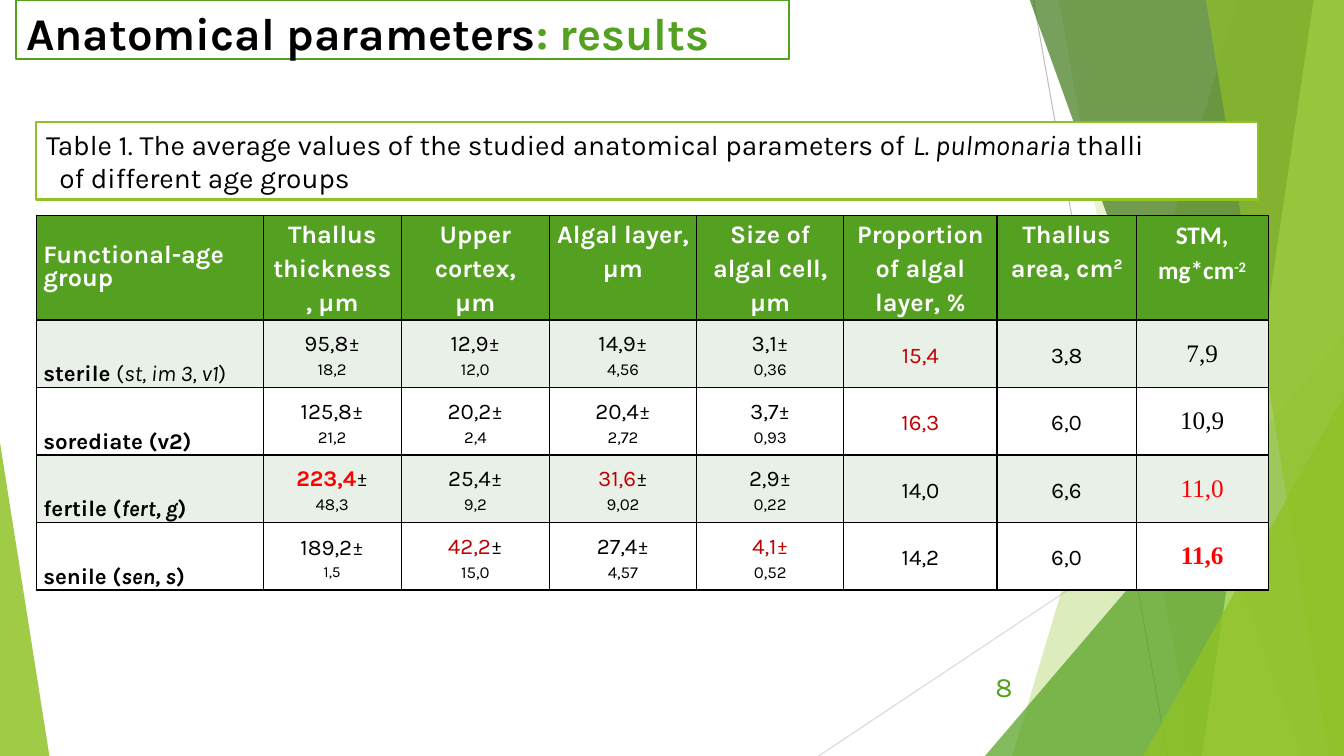
from dataclasses import dataclass

from lxml.etree import SubElement
from pptx import Presentation
from pptx.dml.color import RGBColor
from pptx.enum.shapes import MSO_CONNECTOR, MSO_SHAPE
from pptx.enum.text import MSO_ANCHOR as Anchor, PP_ALIGN as Align
from pptx.oxml.ns import qn
from pptx.util import Inches, Pt


@dataclass(frozen=True)
class Theme:
    font: str = "Karla"
    stm_head_font: str = "Calibri"
    stm_font: str = "Times New Roman"
    lime: str = "90C226"
    green: str = "54A021"
    forest: str = "3F7819"
    pale_lime: str = "C0E474"
    stripe: str = "E9F0E8"
    white: str = "FFFFFF"
    black: str = "000000"
    dark_red: str = "C00000"
    red: str = "FF0000"
    title: float = 32.4
    caption: float = 20
    head: float = 18
    body: float = 16
    deviation: float = 12


T = Theme()

# Decoration: (top left x, bottom left x, colour, opacity) and (box, apex, colour, opacity)
BANDS_BACK = [(12.28, 10.04, T.lime, 30), (10.5, 11.83, T.lime, 20)]
BANDS_FRONT = [(10.21, 12.91, T.forest, 70), (13.03, 11.92, T.pale_lime, 70),
               (11.96, 13.18, T.lime, 65)]
MIDDLE_WEDGE = ((9.77, 3.33, 3.56, 4.17), 1, T.green, 72)
CORNER_WEDGES = [((11.34, 3.93, 1.99, 3.57), 1, T.lime, 80),
                 ((0, 4.39, 0.49, 3.11), 0, T.lime, 85)]

# Table content: a cell is a list of lines
COLUMNS = [2.25, 1.37, 1.47, 1.46, 1.46, 1.52, 1.38, 1.31]
ROWS = [0.81] + [0.67] * 4
STM = len(COLUMNS) - 1
HEADINGS = [["Functional-age group"], ["Thallus thickness, μm"], ["Upper cortex,", "μm"],
            ["Algal layer, μm"], ["Size of algal cell, μm"],
            ["Proportion of algal layer, %"], ["Thallus area, cm"], ["STM, mg*cm"]]
EXPONENTS = {6: "2", STM: "-2"}
# Group names: (text, bold, italic)
GROUPS = [
    [("sterile ", True, False), ("(", False, False), ("st, im 3, v1", False, True),
     (")", False, False)],
    [("sorediate (v2)", True, False)],
    [("fertile (", True, False), ("fert, g", True, True), (")", True, False)],
    [("senile (", True, False), ("sen, s", True, True), (")", True, False)],
]
VALUES = [
    [["95,8±", "18,2"], ["12,9±", "12,0"], ["14,9±", "4,56"], ["3,1±", "0,36"],
     ["15,4"], ["3,8"], ["7,9"]],
    [["125,8±", "21,2"], ["20,2±", "2,4"], ["20,4±", "2,72"], ["3,7±", "0,93"],
     ["16,3"], ["6,0"], ["10,9"]],
    [["223,4±", "48,3"], ["25,4±", "9,2"], ["31,6±", "9,02"], ["2,9±", "0,22"],
     ["14,0"], ["6,6"], ["11,0"]],
    [["189,2±", "1,5"], ["42,2±", "15,0"], ["27,4±", "4,57"], ["4,1±", "0,52"],
     ["14,2"], ["6,0"], ["11,6"]],
]
# (row, column): (highlighted start of the value, colour, bold)
HIGHLIGHTS = {
    (1, 5): ("15,4", T.dark_red, False), (2, 5): ("16,3", T.dark_red, False),
    (3, 1): ("223,4", T.red, True), (3, 3): ("31,6", T.dark_red, False),
    (3, STM): ("11,0", T.red, False), (4, 2): ("42,2", T.dark_red, False),
    (4, 4): ("4,1±", T.dark_red, False), (4, STM): ("11,6", T.red, True),
}


def rgb(colour):
    return RGBColor.from_string(colour)


def paint(shape, colour, opacity=100, outline=None):
    shape.shadow.inherit = False
    shape.fill.solid()
    shape.fill.fore_color.rgb = rgb(colour)
    if opacity < 100:
        clr = shape.fill._xPr.find(qn("a:solidFill"))[0]
        SubElement(clr, qn("a:alpha")).set("val", str(opacity * 1000))
    if outline:
        shape.line.color.rgb = rgb(outline)
        shape.line.width = Pt(1.5)
    else:
        shape.line.fill.background()


def style(paragraph, size, colour=T.black, font=T.font, bold=False, align=Align.LEFT):
    paragraph.alignment = align
    paragraph.font.name, paragraph.font.size = font, Pt(size)
    paragraph.font.bold, paragraph.font.color.rgb = bold, rgb(colour)


def add_run(paragraph, text, colour=None, bold=None, italic=None):
    run = paragraph.add_run()
    run.text = text
    run.font.bold, run.font.italic = bold, italic
    if colour:
        run.font.color.rgb = rgb(colour)
    return run


def add_paragraphs(frame, count):
    return [frame.paragraphs[0]] + [frame.add_paragraph() for _ in range(count - 1)]


def add_ray(slide, start, end, colour):
    ray = slide.shapes.add_connector(MSO_CONNECTOR.STRAIGHT, *map(Inches, start + end))
    ray.line.color.rgb = rgb(colour)
    ray.line.width = Pt(0.75)
    SubElement(ray._element.spPr, qn("a:effectLst"))


def add_band(slide, top_x, bottom_x, colour, opacity):
    outline = slide.shapes.build_freeform(Inches(top_x), Inches(-0.01))
    corners = [(13.33, -0.01), (13.33, 7.5), (bottom_x, 7.5)]
    outline.add_line_segments([(Inches(x), Inches(y)) for x, y in corners], close=True)
    paint(outline.convert_to_shape(), colour, opacity)


def add_wedge(slide, box, apex, colour, opacity):
    wedge = slide.shapes.add_shape(MSO_SHAPE.ISOSCELES_TRIANGLE, *map(Inches, box))
    wedge.adjustments[0] = apex
    paint(wedge, colour, opacity)


def add_decoration(slide):
    add_ray(slide, (10.25, 0), (11.58, 7.5), "BFBFBF")
    add_ray(slide, (13.33, 4.03), (8.12, 7.5), "D9D9D9")
    for band in BANDS_BACK:
        add_band(slide, *band)
    add_wedge(slide, *MIDDLE_WEDGE)
    for band in BANDS_FRONT:
        add_band(slide, *band)
    for wedge in CORNER_WEDGES:
        add_wedge(slide, *wedge)


def add_title(slide):
    title = slide.shapes.title
    title.left, title.top, title.width, title.height = map(Inches, (0.16, 0, 7.67, 0.59))
    paint(title, T.white, outline=T.green)
    title.text_frame.vertical_anchor = Anchor.TOP
    heading = title.text_frame.paragraphs[0]
    style(heading, T.title, bold=True)
    add_run(heading, "Anatomical parameters")
    add_run(heading, ": results", T.green)


def add_caption(slide):
    caption = slide.shapes.add_shape(MSO_SHAPE.RECTANGLE, *map(Inches, (0.36, 1.21, 12.12, 0.77)))
    paint(caption, T.white, outline=T.lime)
    first, second = add_paragraphs(caption.text_frame, 2)
    for line in (first, second):
        style(line, T.caption, align=Align.JUSTIFY)
    add_run(first, "Table 1. The average values of the studied anatomical parameters of ")
    add_run(first, "L. pulmonaria ", italic=True)
    add_run(first, "thalli")
    add_run(second, "of different age groups")
    second._p.get_or_add_pPr().set("marL", str(Inches(0.13)))


def add_page_number(slide):
    box = slide.shapes.add_textbox(*map(Inches, (9.39, 6.61, 0.75, 0.4)))
    box.text_frame.word_wrap = True
    box.text_frame.vertical_anchor = Anchor.MIDDLE
    number = box.text_frame.paragraphs[0]
    style(number, T.caption, T.green, align=Align.RIGHT)
    add_run(number, "8")


def format_cell(cell, fill, anchor, side=0.07):
    cell.margin_left = cell.margin_right = Inches(side)
    cell.margin_top = cell.margin_bottom = 0
    cell.vertical_anchor = anchor
    tc_pr = cell._tc.get_or_add_tcPr()
    for edge in ("a:lnL", "a:lnR", "a:lnT", "a:lnB"):
        border = SubElement(tc_pr, qn(edge), w=str(Pt(1)))
        SubElement(SubElement(border, qn("a:solidFill")), qn("a:srgbClr"), val=T.black)
    cell.fill.solid()
    cell.fill.fore_color.rgb = rgb(fill)


def fill_heading(cell, col):
    format_cell(cell, T.green, Anchor.TOP if col else Anchor.MIDDLE)
    lines = HEADINGS[col]
    for line, text in zip(add_paragraphs(cell.text_frame, len(lines)), lines):
        style(line, T.head, T.white, T.stm_head_font if col == STM else T.font, True,
              Align.CENTER if col else Align.LEFT)
        line.line_spacing = 1.15 if col else 0.8
        add_run(line, text)
    if col in EXPONENTS:
        exponent = add_run(line, EXPONENTS[col])
        exponent._r.get_or_add_rPr().set("baseline", "30000")


def fill_group(cell, row, fill):
    format_cell(cell, fill, Anchor.BOTTOM)
    name = cell.text_frame.paragraphs[0]
    style(name, T.body)
    name.line_spacing = 1.15
    for text, bold, italic in GROUPS[row - 1]:
        add_run(name, text, bold=bold, italic=italic)


def fill_value(cell, row, col, fill):
    is_stm = col == STM
    format_cell(cell, fill, Anchor.MIDDLE, 0.01 if is_stm else 0.07)
    mean, *deviation = VALUES[row - 1][col - 1]
    lines = add_paragraphs(cell.text_frame, 1 + len(deviation))
    style(lines[0], T.head if is_stm else T.body, font=T.stm_font if is_stm else T.font,
          align=Align.CENTER)
    lines[0].line_spacing = 1.0 if is_stm else 1.15
    marked, colour, bold = HIGHLIGHTS.get((row, col), ("", None, None))
    if marked:
        add_run(lines[0], marked, colour, bold)
    if mean != marked:
        add_run(lines[0], mean[len(marked):])
    for line, text in zip(lines[1:], deviation):
        style(line, 11 if text == "1,5" else T.deviation, align=Align.CENTER)
        line.line_spacing, line.space_after = 1.15, Pt(10)
        add_run(line, text)


def add_results_table(slide):
    frame = slide.shapes.add_table(len(ROWS), len(COLUMNS), Inches(0.36), Inches(2.14),
                                   Inches(sum(COLUMNS)), Inches(sum(ROWS)))
    table = frame.table
    table.first_row = table.horz_banding = False
    for col, width in enumerate(COLUMNS):
        table.columns[col].width = Inches(width)
        fill_heading(table.cell(0, col), col)
    for row, height in enumerate(ROWS):
        table.rows[row].height = Inches(height)
    for row in range(1, len(ROWS)):
        fill = T.stripe if row % 2 else T.white
        fill_group(table.cell(row, 0), row, fill)
        for col in range(1, len(COLUMNS)):
            fill_value(table.cell(row, col), row, col, fill)


def main():
    deck = Presentation()
    deck.slide_width, deck.slide_height = Inches(13.33), Inches(7.5)
    slide = deck.slides.add_slide(deck.slide_layouts[5])
    add_decoration(slide)
    add_caption(slide)
    add_page_number(slide)
    add_results_table(slide)
    add_title(slide)
    deck.save("out.pptx")


if __name__ == "__main__":
    main()
